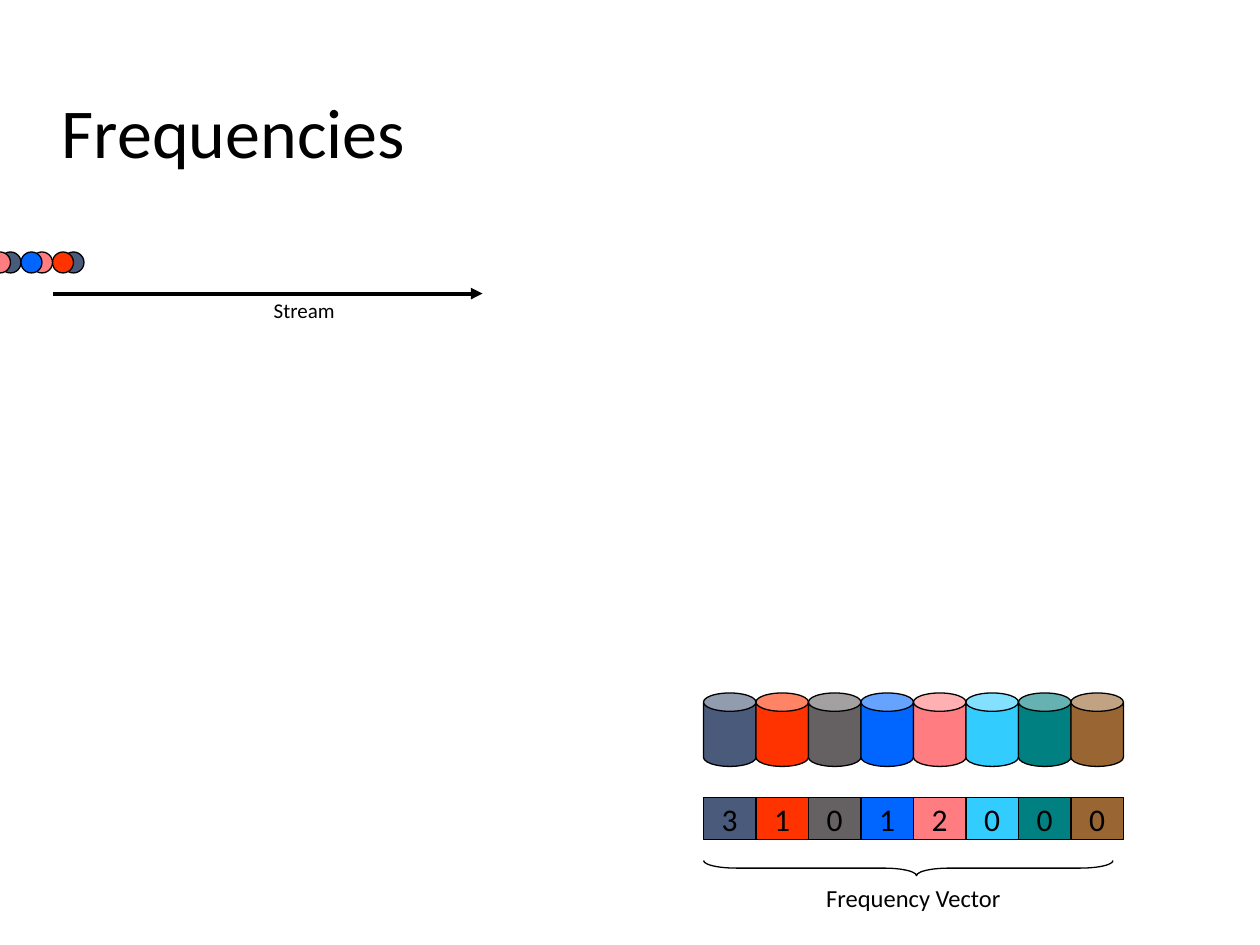
from lxml import etree
from pptx import Presentation
from pptx.dml.color import RGBColor
from pptx.enum.shapes import MSO_CONNECTOR, MSO_SHAPE
from pptx.enum.text import MSO_ANCHOR, MSO_AUTO_SIZE, PP_ALIGN
from pptx.oxml.ns import qn
from pptx.util import Inches, Pt

CAN, RECT, OVAL, BRACE = (MSO_SHAPE.CAN, MSO_SHAPE.RECTANGLE,
                          MSO_SHAPE.OVAL, MSO_SHAPE.RIGHT_BRACE)
CENTER, LEFT = PP_ALIGN.CENTER, PP_ALIGN.LEFT
MIDDLE, BOTTOM = MSO_ANCHOR.MIDDLE, MSO_ANCHOR.BOTTOM
NO_AUTOFIT = MSO_AUTO_SIZE.NONE
STRAIGHT = MSO_CONNECTOR.STRAIGHT
TITLE_ONLY = 5

COLORS = {
    "black": "000000", "white": "FFFFFF", "slate": "4A5A7A", "red": "FF3300",
    "gray": "656162", "blue": "0066FF", "pink": "FF7C80", "sky": "33CCFF",
    "teal": "008080", "brown": "996633",
}
UNIT = 1 / 12  # grid step in inches
FREQUENCIES = {"slate": 3, "red": 1, "gray": 0, "blue": 1,
               "pink": 2, "sky": 0, "teal": 0, "brown": 0}
# Stream items from back to front, with their grid column
STREAM = [("slate", 6), ("red", 5), ("pink", 3), ("slate", 0),
          ("blue", 2), ("pink", -1)]


def rgb(name):
    return RGBColor.from_string(COLORS[name])


class SlideBuilder:
    """Holds the slide and the style shared by its elements."""

    def __init__(self, slide, font="Calibri", line_width=0.75):
        self.slide = slide
        self.font = font
        self.line_width = line_width

    def add_text(self, frame, text, size, align=CENTER, anchor=MIDDLE, wrap=False):
        frame.word_wrap = wrap
        frame.vertical_anchor = anchor
        paragraph = frame.paragraphs[0]
        paragraph.alignment = align
        run = paragraph.add_run()
        run.text = text
        run.font.name = self.font
        run.font.size = Pt(size)
        run.font.color.rgb = rgb("black")
        return paragraph

    def title(self, text, *box):
        title = self.slide.shapes.title
        title.left, title.top, title.width, title.height = map(Inches, box)
        title.text_frame.auto_size = NO_AUTOFIT
        paragraph = self.add_text(title.text_frame, text, 40, LEFT, BOTTOM, True)
        paragraph.space_before = Pt(4)

    def shape(self, kind, *box, fill=None, line="black", adjustments=()):
        shape = self.slide.shapes.add_shape(kind, *map(Inches, box))
        shape.shadow.inherit = False
        if fill:
            shape.fill.solid()
            shape.fill.fore_color.rgb = rgb(fill)
        else:
            shape.fill.background()
        shape.line.color.rgb = rgb(line)
        shape.line.width = Pt(self.line_width)
        for index, value in enumerate(adjustments):
            shape.adjustments[index] = value
        return shape

    def label(self, text, size, *box, fill=None, line="white"):
        shape = self.shape(RECT, *box, fill=fill, line=line)
        self.add_text(shape.text_frame, text, size)

    def arrow(self, *ends):
        arrow = self.slide.shapes.add_connector(STRAIGHT, *map(Inches, ends))
        arrow.line.color.rgb = rgb("black")
        arrow.line.width = Pt(2.25)
        properties = arrow._element.spPr
        etree.SubElement(properties.find(qn("a:ln")), qn("a:tailEnd"), type="triangle")
        etree.SubElement(properties, qn("a:effectLst"))

    def brace_below(self, left, top, width, height, adjustments):
        """Draw a brace whose tip points down, in the given visible box."""
        brace = self.shape(BRACE, left + (width - height) / 2,
                           top + (height - width) / 2, height, width,
                           adjustments=adjustments)
        brace.rotation = 90


def main():
    deck = Presentation()
    deck.slide_width, deck.slide_height = Inches(10), Inches(7.5)
    builder = SlideBuilder(deck.slides.add_slide(deck.slide_layouts[TITLE_ONLY]))

    builder.title("Frequencies", 0.39, 0.25, 8.4, 1.17)

    builder.label("Stream", 12, 1.58, 2.25, 1.67, 0.42)
    for color, column in STREAM:
        builder.shape(OVAL, column * UNIT, 2, 2 * UNIT, 2 * UNIT, fill=color)
    builder.arrow(0.42, 2.33, 3.83, 2.33)

    vector_left, cell_width = 67 * UNIT, 5 * UNIT
    for index, (color, count) in enumerate(FREQUENCIES.items()):
        left = vector_left + index * cell_width
        builder.shape(CAN, left, 5.5, cell_width, 7 * UNIT, fill=color,
                      adjustments=[0.35])
        builder.label(str(count), 18, left, 6.33, cell_width, 4 * UNIT,
                      fill=color, line="black")

    builder.label("Frequency Vector", 14, 5.5, 7, 3.5, 0.25)
    builder.brace_below(vector_left, 6.83, 3.25, 0.12, [2.17, 0.48])

    deck.save("out.pptx")


if __name__ == "__main__":
    main()
